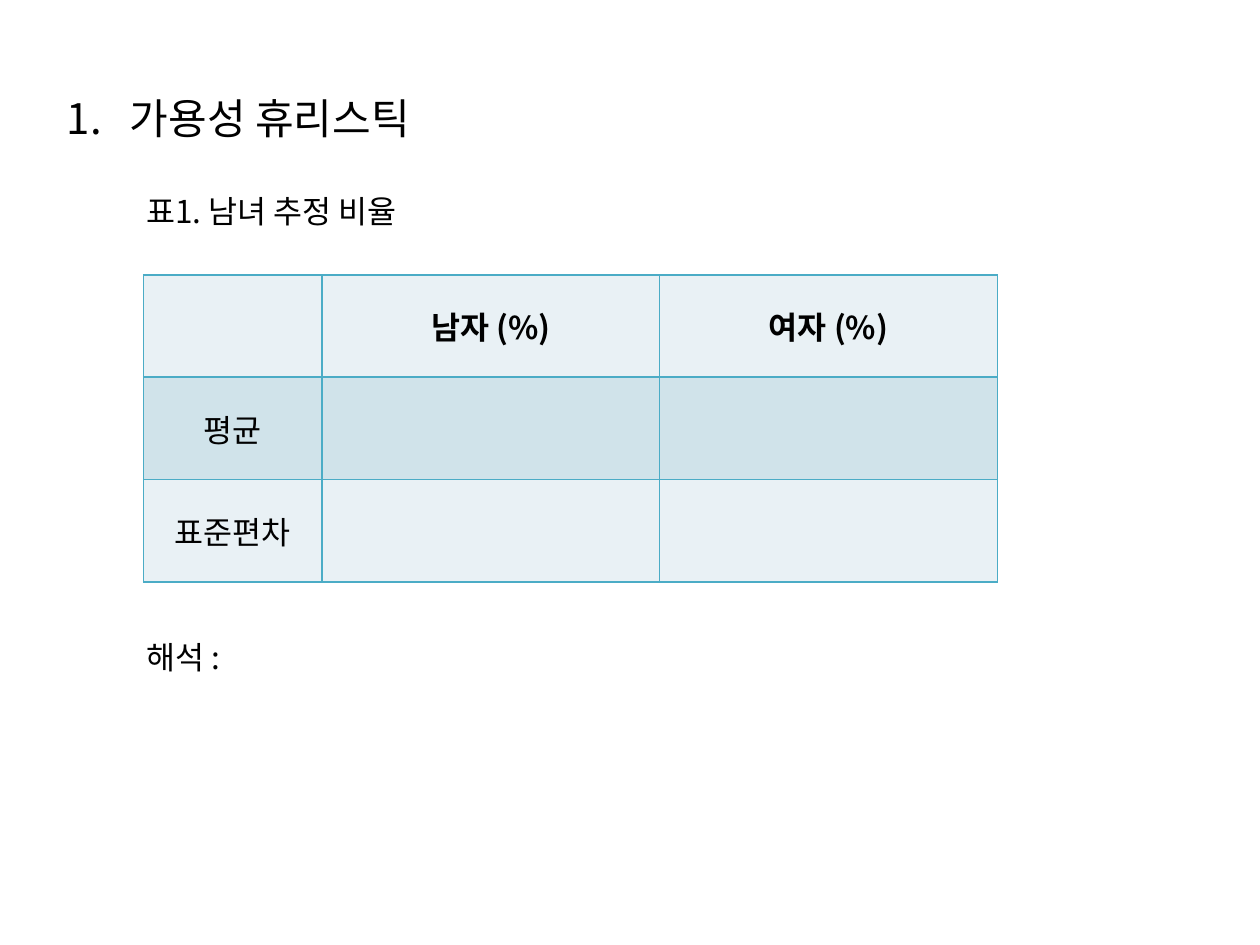
from lxml.etree import SubElement
from pptx import Presentation
from pptx.dml.color import RGBColor
from pptx.enum.text import MSO_ANCHOR, MSO_AUTO_SIZE, PP_ALIGN
from pptx.oxml import parse_xml
from pptx.oxml.ns import nsdecls, qn
from pptx.util import Pt


def color(hex_code):
    return RGBColor.from_string(hex_code)


def write(frame, text, font, size=18, bold=False, ink="000000", align=PP_ALIGN.LEFT):
    paragraph = frame.paragraphs[0]
    paragraph.alignment = align
    run = paragraph.add_run()
    run.text = text
    run.font.size = Pt(size)
    run.font.bold = bold
    run.font.color.rgb = color(ink)
    run.font.name = font
    # Hangul takes its typeface from the East Asian font slot.
    SubElement(run.font._element, qn("a:ea"), typeface=font)
    return paragraph


class SlideBuilder:
    font = "Noto Sans CJK KR"
    border = "4BACC6"
    light_band = "E9F1F5"
    dark_band = "D0E3EA"

    def __init__(self, slide):
        self.slide = slide

    def title(self, text, left, top, width, height, hanging):
        heading = self.slide.shapes.title
        heading.left, heading.top = Pt(left), Pt(top)
        heading.width, heading.height = Pt(width), Pt(height)
        frame = heading.text_frame
        frame.word_wrap = True
        frame.auto_size = MSO_AUTO_SIZE.SHAPE_TO_FIT_TEXT
        frame.vertical_anchor = MSO_ANCHOR.TOP
        properties = write(frame, text, self.font, size=24)._p.get_or_add_pPr()
        properties.set("marL", str(Pt(hanging)))
        properties.set("indent", str(-Pt(hanging)))

    def label(self, text, left, top, width, height=29):
        box = self.slide.shapes.add_textbox(Pt(left), Pt(top), Pt(width), Pt(height))
        frame = box.text_frame
        frame.word_wrap = True
        frame.auto_size = MSO_AUTO_SIZE.SHAPE_TO_FIT_TEXT
        write(frame, text, self.font)

    def table(self, rows, left, top, column_widths, row_height):
        grid = self.slide.shapes.add_table(
            len(rows), len(column_widths), Pt(left), Pt(top),
            Pt(sum(column_widths)), Pt(row_height * len(rows))).table
        for column, width in zip(grid.columns, column_widths):
            column.width = Pt(width)
        for r, texts in enumerate(rows):
            grid.rows[r].height = Pt(row_height)
            for c, text in enumerate(texts):
                cell = grid.cell(r, c)
                cell.vertical_anchor = MSO_ANCHOR.MIDDLE
                cell.fill.solid()
                cell.fill.fore_color.rgb = color(self.dark_band if r % 2 else self.light_band)
                self.outline(cell)
                if text:
                    write(cell.text_frame, text, self.font, bold=r == 0, align=PP_ALIGN.CENTER)

    def outline(self, cell):
        properties = cell._tc.get_or_add_tcPr()
        for position, side in enumerate(("lnL", "lnR", "lnT", "lnB")):
            properties.insert(position, parse_xml(
                f'<a:{side} {nsdecls("a")} w="{Pt(1)}"><a:solidFill>'
                f'<a:srgbClr val="{self.border}"/></a:solidFill></a:{side}>'))


def main():
    presentation = Presentation()
    presentation.slide_width, presentation.slide_height = Pt(720), Pt(540)
    title_only = presentation.slide_layouts[5]
    builder = SlideBuilder(presentation.slides.add_slide(title_only))

    builder.title("1.\t가용성 휴리스틱", 31, 49, 471, 36, hanging=36)
    estimates = [
        ["", "남자 (%)", "여자 (%)"],
        ["평균", "", ""],
        ["표준편차", "", ""],
    ]
    builder.table(estimates, 82, 157, [102, 193, 193], 58.5)
    builder.label("해석 :", 76.5, 361, 249)
    builder.label("표1. 남녀 추정 비율", 76.5, 106, 278)
    presentation.save("out.pptx")


if __name__ == "__main__":
    main()
